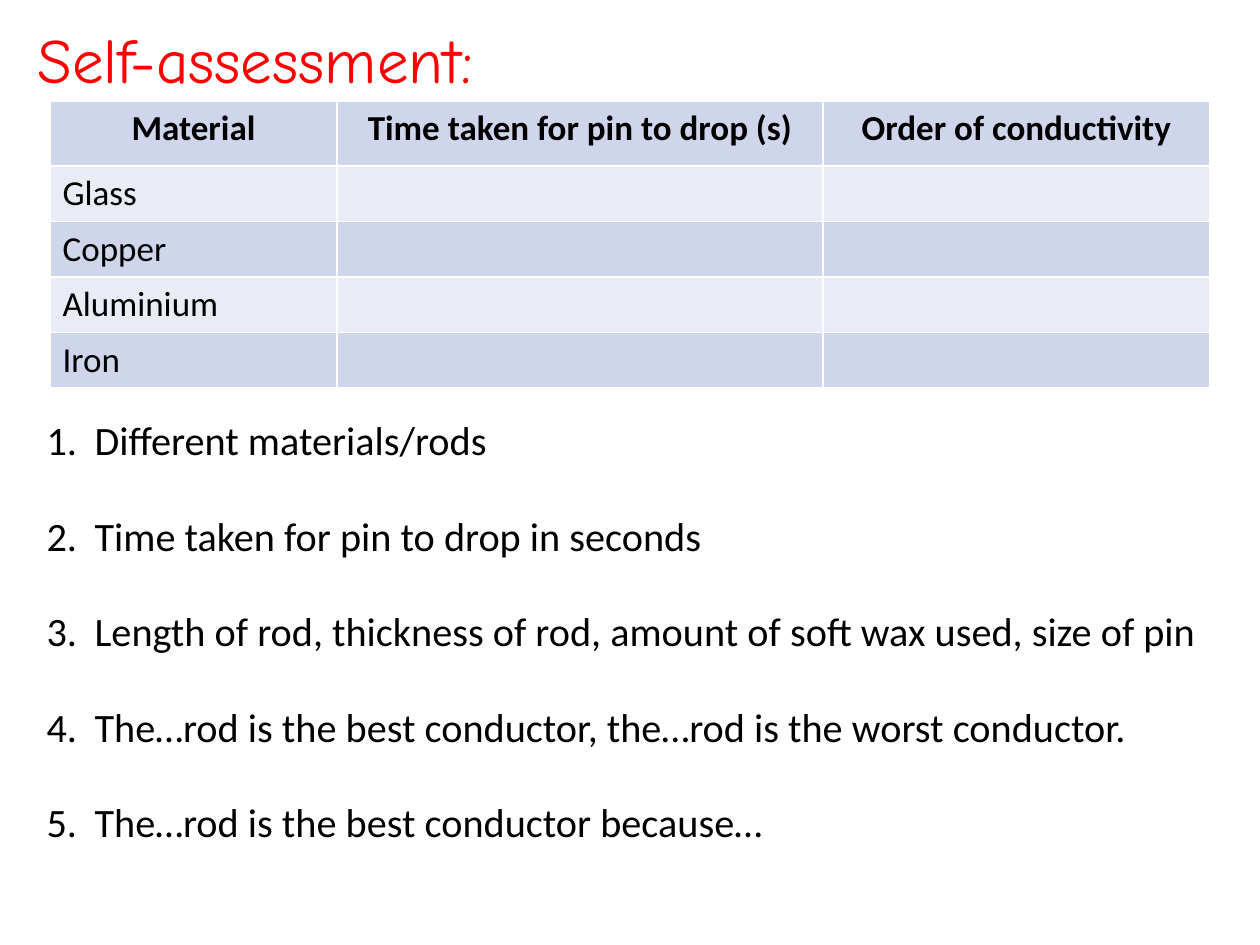
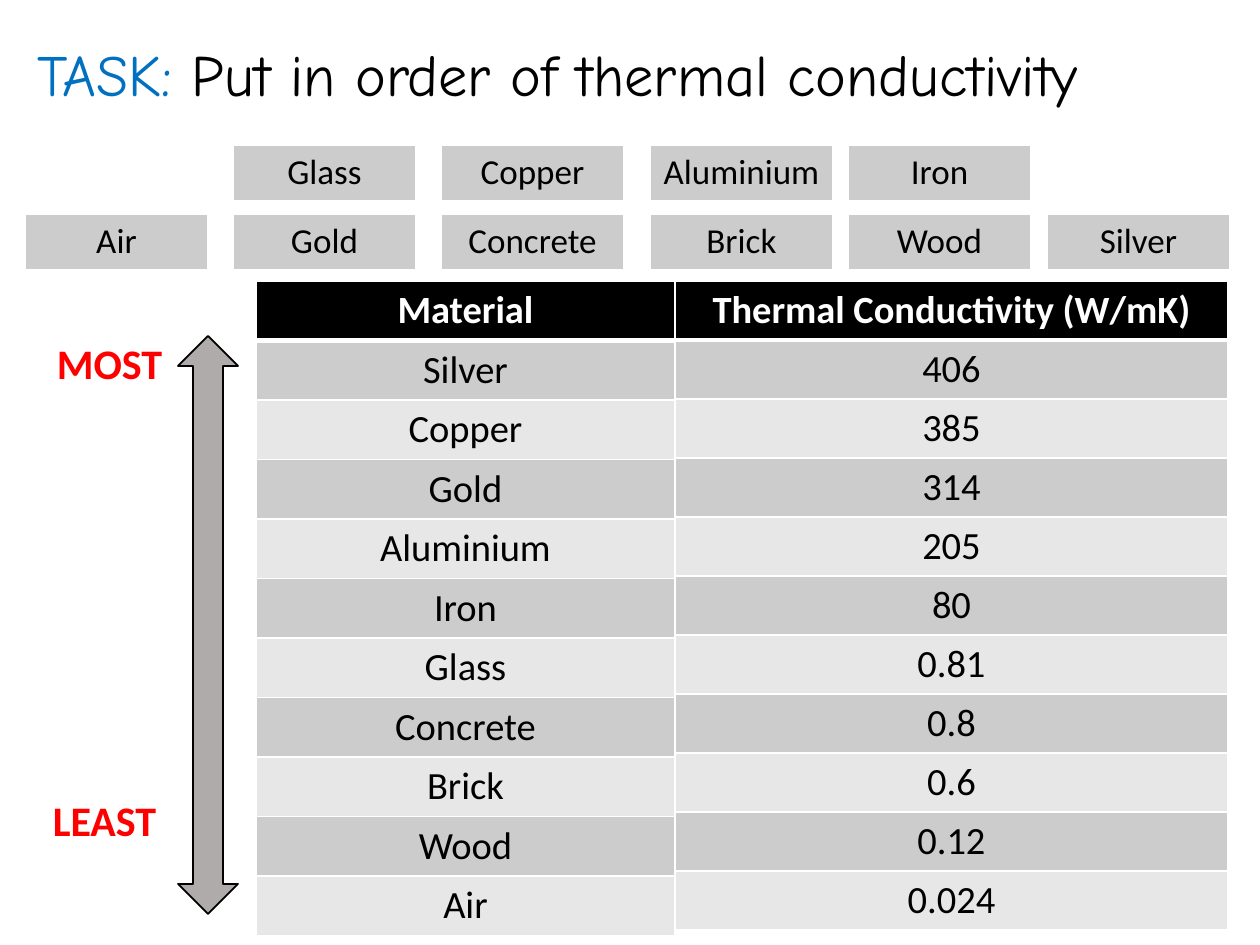
from dataclasses import dataclass

from lxml import etree
from pptx import Presentation
from pptx.dml.color import RGBColor
from pptx.enum.shapes import MSO_SHAPE
from pptx.enum.text import MSO_ANCHOR, MSO_AUTO_SIZE, PP_ALIGN
from pptx.oxml.ns import qn
from pptx.util import Pt

LEFT, CENTER = PP_ALIGN.LEFT, PP_ALIGN.CENTER
TOP = MSO_ANCHOR.TOP
NO_AUTOFIT = MSO_AUTO_SIZE.NONE
DOUBLE_ARROW = MSO_SHAPE.LEFT_RIGHT_ARROW
TITLE_AND_CONTENT, TITLE_ONLY = 1, 5


@dataclass(frozen=True)
class Theme:
    title_font: str = "Comic Neue"
    body_font: str = "Calibri"
    black: str = "000000"
    white: str = "FFFFFF"
    red: str = "FF0000"
    blue: str = "0070C0"
    arrow: str = "AFABAB"
    blue_bands: tuple = ("CFD5EA", "E9EBF5")
    grey_bands: tuple = ("CCCCCC", "E7E7E7")
    title_size: float = 36
    task_size: float = 33.3
    list_size: float = 23
    cell_size: float = 20
    ranking_size: float = 22
    label_size: float = 24


THEME = Theme()

# Content
ASSESSMENT_TITLE = [("Self-assessment:", THEME.red)]
RESULTS = [
    ["Material", "Time taken for pin to drop (s)", "Order of conductivity"],
    ["Glass", "", ""],
    ["Copper", "", ""],
    ["Aluminium", "", ""],
    ["Iron", "", ""],
]
ANSWERS = [
    "Different materials/rods",
    "Time taken for pin to drop in seconds",
    "Length of rod, thickness of rod, amount of soft wax used, size of pin",
    "The…rod is the best conductor, the…rod is the worst conductor.",
    "The…rod is the best conductor because…",
]
TASK_TITLE = [("TASK: ", THEME.blue),
              ("Put in order of thermal conductivity", THEME.black)]
TILE_COLUMNS = [25, 233, 441, 650, 848, 1047]
TILE_ROWS = [
    (145, ["", "Glass", "Copper", "Aluminium", "Iron", ""]),
    (214, ["Air", "Gold", "Concrete", "Brick", "Wood", "Silver"]),
]
RANKING_HEADS = ("Material", "Thermal Conductivity (W/mK)")
RANKING = [
    ("Silver", "406"), ("Copper", "385"), ("Gold", "314"),
    ("Aluminium", "205"), ("Iron", "80"), ("Glass", "0.81"),
    ("Concrete", "0.8"), ("Brick", "0.6"), ("Wood", "0.12"),
    ("Air", "0.024"),
]
RANKING_COLUMNS = [(256, 419, 6.3), (675, 553, 6)]  # left, width, cell margin
END_LABELS = [("MOST", 25, 331), ("LEAST", 20, 788)]


def px(n):
    return round(n * 914400 / 126)


def place(s, left, top, width, height):
    s.left, s.top, s.width, s.height = map(px, (left, top, width, height))


def add_run(p, text, size, color, font=THEME.body_font, bold=False):
    r = p.add_run()
    r.text = text
    r.font.name, r.font.size, r.font.bold = font, Pt(size), bold
    r.font.color.rgb = RGBColor.from_string(color)


def fill(target, color):
    target.fill.solid()
    target.fill.fore_color.rgb = RGBColor.from_string(color)


def set_title(slide, runs, box, size, spacing=1.0):
    s = slide.shapes.title
    place(s, *box)
    tf = s.text_frame
    tf.auto_size, tf.vertical_anchor = NO_AUTOFIT, TOP
    p = tf.paragraphs[0]
    p.alignment, p.line_spacing = LEFT, spacing
    for text, color in runs:
        add_run(p, text, size, color, THEME.title_font)


def number(p, indent):
    """Give the paragraph a hanging 1. 2. 3. number."""
    pPr = p._p.get_or_add_pPr()
    pPr.set("marL", str(px(indent)))
    pPr.set("indent", str(-px(indent)))
    etree.SubElement(pPr, qn("a:buFont"), typeface=THEME.body_font)
    etree.SubElement(pPr, qn("a:buAutoNum"), type="arabicPeriod")


def set_numbered_list(s, items, box):
    place(s, *box)
    fill(s, THEME.white)
    tf = s.text_frame
    tf.auto_size, tf.vertical_anchor = NO_AUTOFIT, TOP
    for i, item in enumerate(items):
        p = tf.add_paragraph() if i else tf.paragraphs[0]
        p.space_before, p.space_after = Pt(0), Pt(27)
        number(p, 48)
        add_run(p, item, THEME.list_size, THEME.black)


def set_borders(cell, bottom):
    tcPr = cell._tc.get_or_add_tcPr()
    widths = {"a:lnL": 1, "a:lnR": 1, "a:lnT": 1, "a:lnB": bottom}
    for i, (tag, width) in enumerate(widths.items()):
        ln = etree.Element(qn(tag), w=str(Pt(width)))
        solid = etree.SubElement(ln, qn("a:solidFill"))
        etree.SubElement(solid, qn("a:srgbClr"), val=THEME.white)
        tcPr.insert(i, ln)


def add_grid(slide, rows, left, top, widths, heights, bands, size=THEME.cell_size,
             head=None, centered=True, margin=6.3):
    """Add a banded table; head is the (fill, text) colour pair of a bold first row."""
    table = slide.shapes.add_table(len(rows), len(widths), px(left), px(top),
                                   px(sum(widths)), px(sum(heights))).table
    table.first_row = table.horz_banding = False
    for column, width in zip(table.columns, widths):
        column.width = px(width)
    for i, (texts, height) in enumerate(zip(rows, heights)):
        table.rows[i].height = px(height)
        is_head = head is not None and i == 0
        band = bands[(i - (head is not None)) % 2]
        back, color = head if is_head else (band, THEME.black)
        for j, text in enumerate(texts):
            cell = table.cell(i, j)
            cell.margin_top = cell.margin_bottom = px(margin)
            fill(cell, back)
            set_borders(cell, 3 if back == THEME.black else 1)
            if text:
                p = cell.text_frame.paragraphs[0]
                p.alignment = CENTER if centered or is_head else LEFT
                add_run(p, text, size, color, bold=is_head)


def add_label(slide, text, left, top):
    tf = slide.shapes.add_textbox(px(left), px(top), px(169), px(63)).text_frame
    tf.word_wrap = True
    p = tf.paragraphs[0]
    p.alignment = CENTER
    add_run(p, text, THEME.label_size, THEME.red, bold=True)


def add_scale_arrow(slide):
    s = slide.shapes.add_shape(DOUBLE_ARROW, px(-81), px(595), px(578), px(60))
    s.rotation = 90
    s.shadow.inherit = False
    fill(s, THEME.arrow)
    s.line.color.rgb = RGBColor.from_string(THEME.black)
    s.line.width = Pt(1)


def build_assessment(prs):
    slide = prs.slides.add_slide(prs.slide_layouts[TITLE_AND_CONTENT])
    set_title(slide, ASSESSMENT_TITLE, (25, 14, 553, 89), THEME.title_size)
    set_numbered_list(slide.placeholders[1], ANSWERS, (34, 409, 1193, 451))
    dark, light = THEME.blue_bands
    add_grid(slide, RESULTS, 50, 101, [287, 486, 387], [65] + [55] * 4,
             (light, dark), head=(dark, THEME.black), centered=False)


def build_task(prs):
    slide = prs.slides.add_slide(prs.slide_layouts[TITLE_ONLY])
    set_title(slide, TASK_TITLE, (25, 40, 1221, 79), THEME.task_size, 0.9)
    for top, names in TILE_ROWS:
        for left, name in zip(TILE_COLUMNS, names):
            if name:
                add_grid(slide, [[name]], left, top, [183], [54], THEME.grey_bands)
    columns = zip(*([RANKING_HEADS] + RANKING))
    for texts, (left, width, margin) in zip(columns, RANKING_COLUMNS):
        add_grid(slide, [[text] for text in texts], left, 281, [width],
                 [59] * len(texts), THEME.grey_bands, THEME.ranking_size,
                 head=(THEME.black, THEME.white), margin=margin)
    add_scale_arrow(slide)
    for label in END_LABELS:
        add_label(slide, *label)


def main():
    prs = Presentation()
    prs.slide_width, prs.slide_height = px(1260), px(945)
    build_assessment(prs)
    build_task(prs)
    prs.save("out.pptx")


if __name__ == "__main__":
    main()
